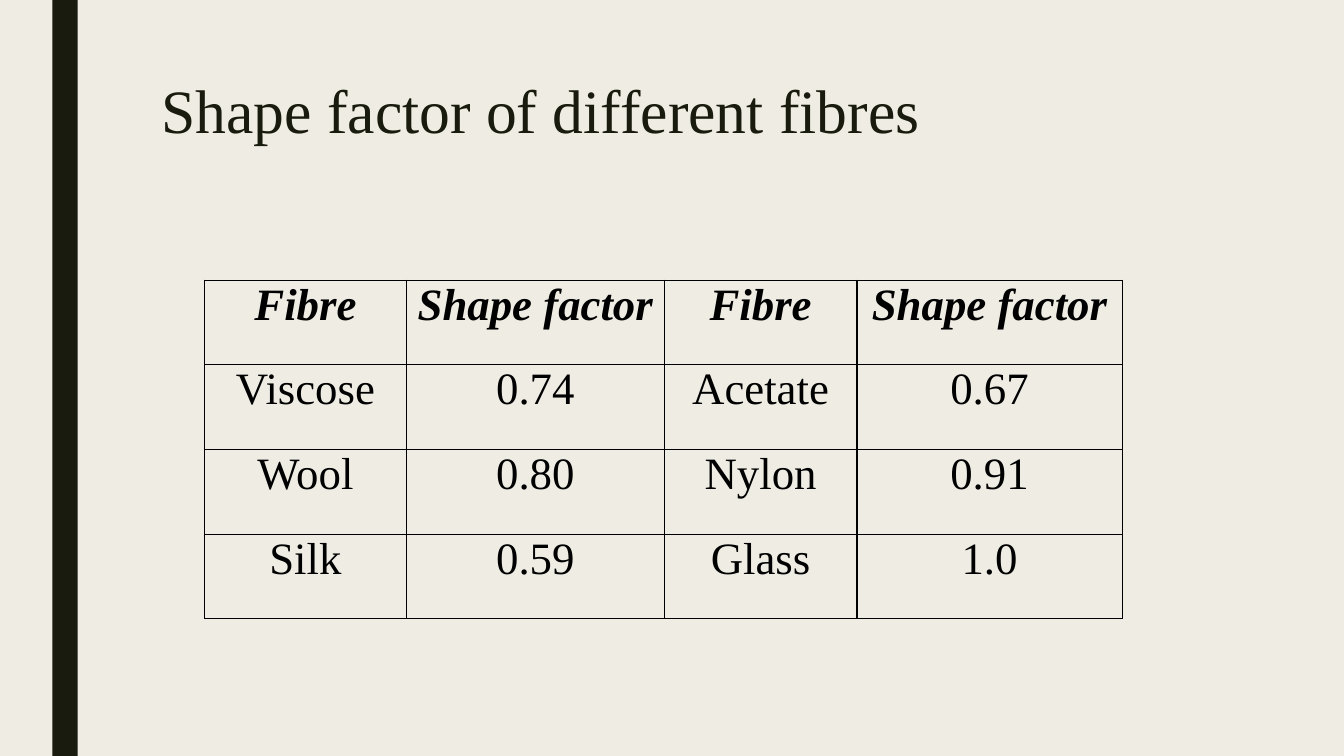
from pptx import Presentation
from pptx.dml.color import RGBColor
from pptx.enum.shapes import MSO_SHAPE
from pptx.enum.text import MSO_ANCHOR, MSO_AUTO_SIZE, PP_ALIGN
from pptx.oxml import parse_xml
from pptx.oxml.ns import nsdecls
from pptx.util import Inches, Pt

CREAM = RGBColor(0xEF, 0xED, 0xE3)
DARK_OLIVE = RGBColor(0x19, 0x1B, 0x0E)
BLACK = RGBColor(0, 0, 0)
FONT = "Times New Roman"

COLUMN_WIDTHS = (2, 2.56, 1.91, 2.63)
ROW_HEIGHT = 0.84
FIBRE_ROWS = (
    ("Fibre", "Shape factor", "Fibre", "Shape factor"),
    ("Viscose", "0.74", "Acetate", "0.67"),
    ("Wool", "0.80", "Nylon", "0.91"),
    ("Silk", "0.59", "Glass", "1.0"),
)
CELL_FORMAT = {
    "margin_left": Inches(0.07),
    "margin_right": Inches(0.07),
    "margin_top": 0,
    "margin_bottom": 0,
    "vertical_anchor": MSO_ANCHOR.TOP,
}


def set_attributes(target, values):
    for attribute, value in values.items():
        setattr(target, attribute, value)


def format_text(paragraph, size, color, **styles):
    set_attributes(paragraph.font, {"name": FONT, "size": Pt(size), **styles})
    paragraph.font.color.rgb = color


def add_side_bar(slide, slide_height):
    bar = slide.shapes.add_shape(
        MSO_SHAPE.RECTANGLE, Inches(0.52), 0, Inches(0.25), slide_height)
    bar.shadow.inherit = False
    bar.fill.solid()
    bar.fill.fore_color.rgb = DARK_OLIVE
    bar.line.fill.background()


def fill_title(slide, wording):
    title = slide.shapes.title
    set_attributes(title, {
        "left": Inches(1.5), "top": Inches(0.75),
        "width": Inches(10.5), "height": Inches(1.62),
    })
    frame = title.text_frame
    frame.text = wording
    set_attributes(frame, {
        "word_wrap": True,
        "auto_size": MSO_AUTO_SIZE.NONE,
        "vertical_anchor": MSO_ANCHOR.TOP,
    })
    heading = frame.paragraphs[0]
    set_attributes(heading, {"alignment": PP_ALIGN.LEFT, "line_spacing": 0.89})
    format_text(heading, 44, DARK_OLIVE)


def add_borders(cell):
    """Draw a 1 pt line on all four sides, ahead of the cell's fill."""
    properties = cell._tc.get_or_add_tcPr()
    for position, side in enumerate(("lnL", "lnR", "lnT", "lnB")):
        properties.insert(position, parse_xml(
            f'<a:{side} {nsdecls("a")} w="{Pt(1)}"><a:solidFill>'
            f'<a:srgbClr val="{BLACK}"/></a:solidFill></a:{side}>'))


def fill_cell(cell, wording, is_header):
    cell.text = wording
    set_attributes(cell, CELL_FORMAT)
    cell.fill.background()
    add_borders(cell)
    entry = cell.text_frame.paragraphs[0]
    entry.alignment = PP_ALIGN.CENTER
    format_text(entry, 32, BLACK, bold=is_header, italic=is_header)


def add_fibre_table(slide):
    table = slide.shapes.add_table(
        len(FIBRE_ROWS), len(COLUMN_WIDTHS), Inches(2.03), Inches(2.78),
        Inches(sum(COLUMN_WIDTHS)), Inches(ROW_HEIGHT * len(FIBRE_ROWS))).table
    set_attributes(table, {"first_row": False, "horz_banding": False})
    for column, width in zip(table.columns, COLUMN_WIDTHS):
        column.width = Inches(width)
    for row_index, (row, entries) in enumerate(zip(table.rows, FIBRE_ROWS)):
        row.height = Inches(ROW_HEIGHT)
        for cell, wording in zip(row.cells, entries):
            fill_cell(cell, wording, is_header=row_index == 0)


def main():
    deck = Presentation()
    set_attributes(deck, {"slide_width": Inches(13.33), "slide_height": Inches(7.5)})
    title_only = deck.slide_layouts[5]
    slide = deck.slides.add_slide(title_only)
    slide.background.fill.solid()
    slide.background.fill.fore_color.rgb = CREAM
    add_side_bar(slide, deck.slide_height)
    fill_title(slide, "Shape factor of different fibres")
    add_fibre_table(slide)
    deck.save("out.pptx")


if __name__ == "__main__":
    main()
